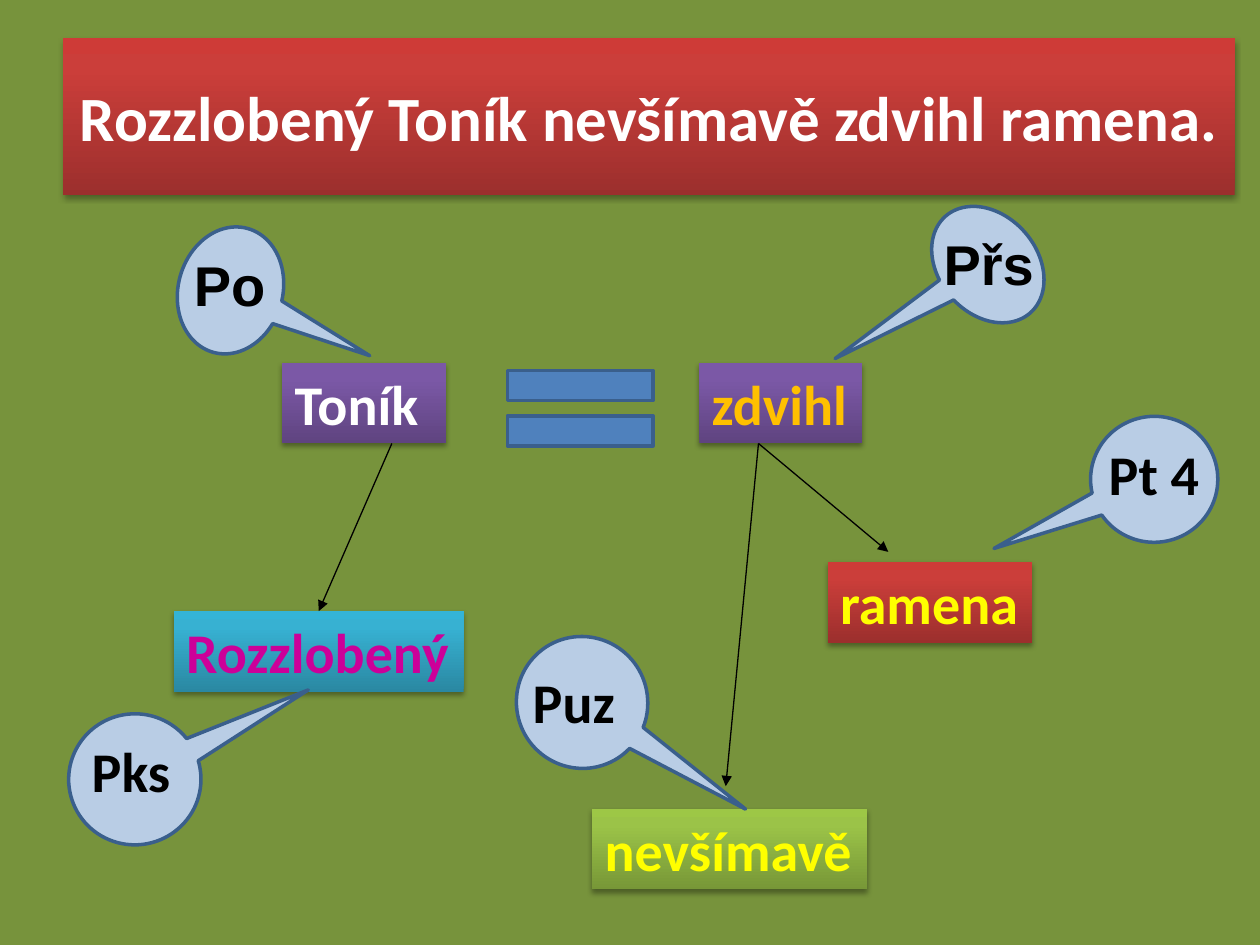
from lxml import etree
from pptx import Presentation
from pptx.dml.color import RGBColor
from pptx.enum.shapes import MSO_CONNECTOR, MSO_SHAPE
from pptx.enum.text import MSO_ANCHOR, PP_ALIGN
from pptx.oxml import parse_xml
from pptx.oxml.ns import nsdecls, qn
from pptx.util import Inches, Pt

THEME = {
    "bg": "77933C", "bubble": "B9CDE5", "equal": "4F81BD", "outline": "3A5F8C",
    "black": "000000", "white": "FFFFFF", "yellow": "FFFF00",
    "orange": "FFC000", "magenta": "CC0099",
    "font": "Calibri", "label_font": "Arial", "title_size": 36, "size": 32,
    # gradient stops at 0, 80 and 100 percent, from the bottom up
    "red": ("9C2F2D", "CB3E3A", "CE3B37"),
    "purple": ("5F4480", "7B58A6", "7C57A8"),
    "aqua": ("2A88A2", "37B1D2", "34B4D6"),
    "green": ("779737", "9BC348", "9DC746"),
}
TEXT_H = 0.64

# Content
TITLE = "Rozzlobený Toník nevšímavě zdvihl ramena."
# word, left, top, width, gradient, text colour
WORDS = [
    ("Toník", 2.24, 2.88, 1.3, "purple", "white"),
    ("zdvihl", 5.55, 2.88, 1.29, "purple", "orange"),
    ("Rozzlobený", 1.38, 4.85, 2.3, "aqua", "magenta"),
    ("ramena", 6.57, 4.46, 1.62, "red", "yellow"),
    ("nevšímavě", 4.7, 6.42, 2.18, "green", "yellow"),
]
# label, label (left, top, width), font, bubble box, rotation, pointer, flipped
BUBBLES = [
    ("Po", (1.44, 1.94, 0.78), "label_font", (1.32, 1.89, 1.02, 0.83), 285.5, (-0.2, 1.45), False),
    ("Přs", (7.39, 1.77, 0.93), "label_font", (7.33, 1.71, 1.02, 0.78), 48.9, (-0.23, 1.8), False),
    ("Pks", (0.63, 5.8, 0.83), "font", (0.55, 5.66, 1.04, 1.05), 266.5, (0.6, 1.35), False),
    ("Pt 4", (8.7, 3.44, 0.93), "font", (8.66, 3.3, 1, 1.01), 266.5, (0.47, -1.29), True),
    ("Puz", (4.13, 5.25, 0.86), "font", (4.1, 5.05, 1.04, 1.05), 326.9, (0.6, 1.35), False),
]
# start, end, word whose top side the arrow meets in the middle
ARROWS = [
    ((3.11, 3.52), (2.53, 4.85), "Rozzlobený"),
    ((6.02, 3.52), (7.05, 4.38), None),
    ((6.02, 3.52), (5.76, 6.24), None),
]


def rgb(name):
    return RGBColor.from_string(THEME[name])


def inches(*values):
    return [Inches(v) for v in values]


def write(sp, text, color="black", font="font", size="size",
          align=PP_ALIGN.LEFT, anchor=MSO_ANCHOR.TOP, right=0):
    tf = sp.text_frame
    tf.word_wrap = True
    tf.vertical_anchor = anchor
    tf.margin_right = Inches(right)
    p = tf.paragraphs[0]
    p.alignment = align
    r = p.add_run()
    r.text = text
    r.font.name = THEME[font]
    r.font.size = Pt(THEME[size])
    r.font.bold = True
    r.font.color.rgb = rgb(color)


def style_box(sp, gradient):
    """Three-stop vertical gradient, no outline, soft shadow below."""
    stops = "".join(
        f'<a:gs pos="{pos * 1000}"><a:srgbClr val="{color}"/></a:gs>'
        for pos, color in zip((0, 80, 100), THEME[gradient]))
    spPr = sp._element.spPr
    spPr.append(parse_xml(
        f'<a:gradFill {nsdecls("a")} rotWithShape="1"><a:gsLst>{stops}</a:gsLst>'
        '<a:lin ang="16200000" scaled="0"/></a:gradFill>'))
    sp.line.fill.background()
    spPr.append(parse_xml(
        f'<a:effectLst {nsdecls("a")}><a:outerShdw blurRad="{Pt(3.1)}" dist="{Pt(1.8)}" '
        'dir="5400000" rotWithShape="0"><a:srgbClr val="000000">'
        '<a:alpha val="35000"/></a:srgbClr></a:outerShdw></a:effectLst>'))


def add_outlined(slide, kind, box, fill, adjustments):
    sp = slide.shapes.add_shape(kind, *inches(*box))
    sp.shadow.inherit = False
    sp.fill.solid()
    sp.fill.fore_color.rgb = rgb(fill)
    sp.line.color.rgb = rgb("outline")
    sp.line.width = Pt(2)
    for i, value in enumerate(adjustments):
        sp.adjustments[i] = value
    return sp


def add_arrow(slide, start, end, target=None):
    line = slide.shapes.add_connector(MSO_CONNECTOR.STRAIGHT, *inches(*start, *end))
    if target is not None:
        line.end_connect(target, 0)
    line.line.color.rgb = rgb("black")
    line.line.width = Pt(0.75)
    etree.SubElement(line.line._get_or_add_ln(), qn("a:tailEnd"), type="triangle")
    etree.SubElement(line._element.spPr, qn("a:effectLst"))


def main():
    prs = Presentation()
    prs.slide_width, prs.slide_height = inches(10, 7.5)
    slide = prs.slides.add_slide(prs.slide_layouts[5])
    slide.background.fill.solid()
    slide.background.fill.fore_color.rgb = rgb("bg")

    # Title: the whole sentence
    title = slide.shapes.title
    title.left, title.top, title.width, title.height = inches(0.5, 0.3, 9.3, 1.25)
    style_box(title, "red")
    write(title, TITLE, color="white", size="title_size", right=0.1,
          align=PP_ALIGN.CENTER, anchor=MSO_ANCHOR.MIDDLE)

    # Words of the sentence
    boxes = {}
    for word, left, top, width, gradient, color in WORDS:
        sp = slide.shapes.add_shape(MSO_SHAPE.RECTANGLE, *inches(left, top, width, TEXT_H))
        style_box(sp, gradient)
        write(sp, word, color=color)
        boxes[word] = sp

    # Subject and predicate pair
    add_outlined(slide, MSO_SHAPE.MATH_EQUAL, (3.82, 2.73, 1.57, 1.02), "equal", (0.235, 0.118))

    # Dependencies between words
    for start, end, word in ARROWS:
        add_arrow(slide, start, end, boxes.get(word))

    # Bubbles naming the sentence parts
    for label, (left, top, width), font, box, rotation, pointer, flipped in BUBBLES:
        sp = add_outlined(slide, MSO_SHAPE.OVAL_CALLOUT, box, "bubble", pointer)
        sp.rotation = rotation
        if flipped:
            sp._element.spPr.xfrm.set("flipH", "1")
        tb = slide.shapes.add_textbox(*inches(left, top, width, TEXT_H))
        write(tb, label, font=font)

    prs.save("out.pptx")


if __name__ == "__main__":
    main()
